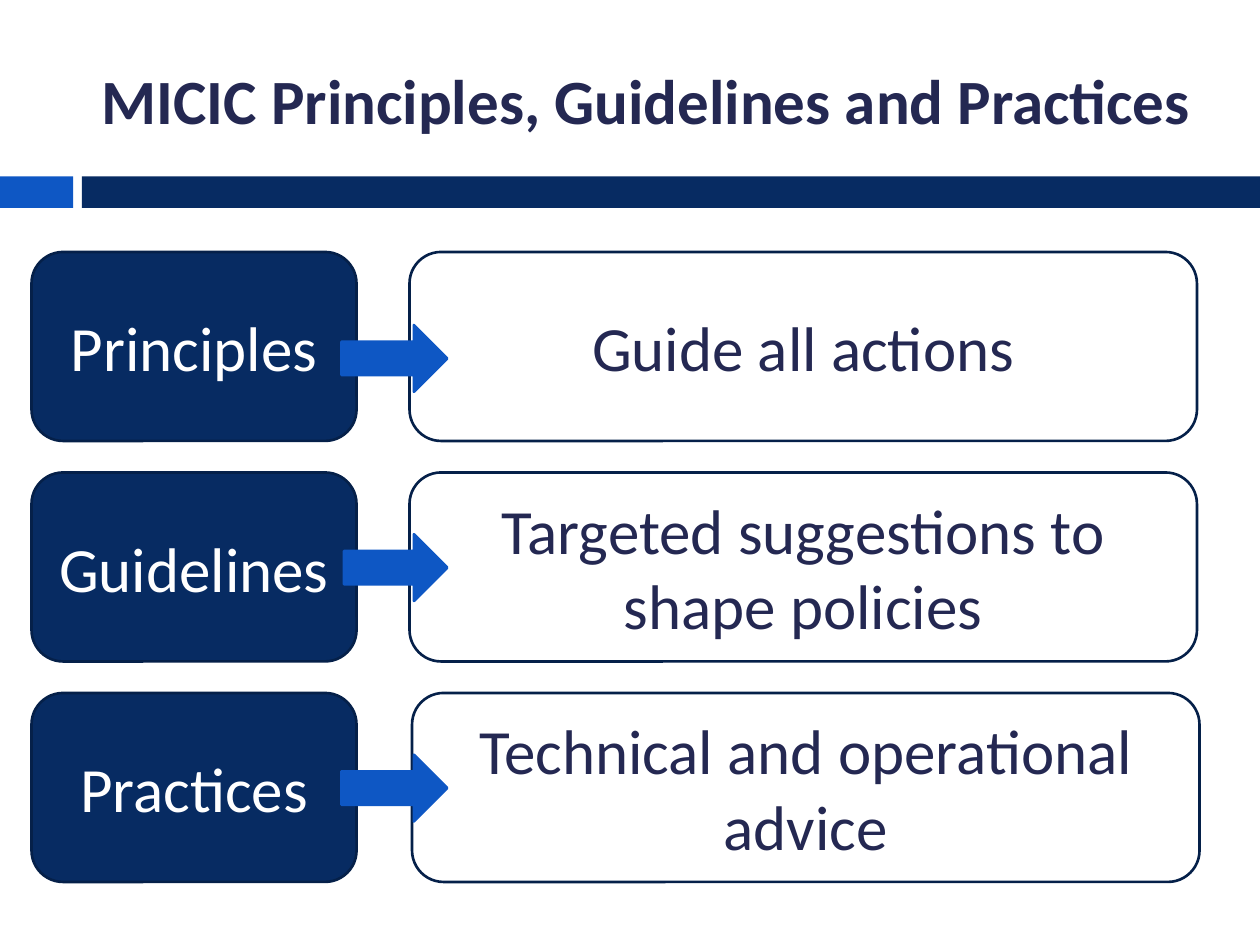
from dataclasses import dataclass
from pptx import Presentation
from pptx.dml.color import RGBColor as RGB
from pptx.enum.shapes import MSO_SHAPE as Shape
from pptx.enum.text import MSO_ANCHOR as Anchor, PP_ALIGN as Align
from pptx.util import Inches, Pt


@dataclass(frozen=True)
class Theme:
    navy: RGB = RGB.from_string("072B62")
    blue: RGB = RGB.from_string("0E57C4")
    outline: RGB = RGB.from_string("052049")
    ink: RGB = RGB.from_string("242852")
    white: RGB = RGB.from_string("FFFFFF")
    font: str = "Calibri"
    size: int = 36
    line: float = 1.5


THEME = Theme()
SLIDE_W, SLIDE_H = 10, 7.5
BAR_TOP, BAR_H = 1.4, 0.25
ROW_TOP, ROW_H, ROW_GAP = 2, 1.5, 0.25
LABEL_LEFT, LABEL_W = 0.25, 2.58
DETAIL_W = 6.25
ARROW_RIGHT, ARROW_H = 3.55, 0.53

# label, detail, detail left, arrow left, arrow offset within the row
ROWS = [
    ("Principles", "Guide all actions", 3.25, 2.71, 0.58),
    ("Guidelines", "Targeted suggestions to shape policies", 3.25, 2.73, 0.49),
    ("Practices", "Technical and operational advice", 3.27, 2.71, 0.49),
]


def write(sp, text, color, bold=False):
    tf = sp.text_frame
    tf.word_wrap = True
    tf.vertical_anchor = Anchor.MIDDLE
    p = tf.paragraphs[0]
    p.alignment = Align.CENTER
    r = p.add_run()
    r.text = text
    r.font.name = THEME.font
    r.font.size = Pt(THEME.size)
    r.font.bold = bold
    r.font.color.rgb = color


def add_block(s, kind, box, fill, line=None):
    sp = s.shapes.add_shape(kind, *map(Inches, box))
    sp.shadow.inherit = False
    sp.fill.solid()
    sp.fill.fore_color.rgb = fill
    if line is None:
        sp.line.fill.background()
    else:
        sp.line.color.rgb = line
        sp.line.width = Pt(THEME.line)
    return sp


def add_card(s, box, text, fill, color):
    sp = add_block(s, Shape.ROUNDED_RECTANGLE, box, fill, THEME.outline)
    write(sp, text, color)


def add_header(s, title):
    for left, right, fill in ((0, 0.58, THEME.blue), (0.65, SLIDE_W, THEME.navy)):
        add_block(s, Shape.RECTANGLE, (left, BAR_TOP, right - left, BAR_H), fill)
    sp = s.shapes.add_textbox(*map(Inches, (0.67, 0.25, 8.92, 1.08)))
    write(sp, title, THEME.ink, bold=True)


def add_row(s, index, label, detail, detail_left, arrow_left, arrow_offset):
    top = ROW_TOP + index * (ROW_H + ROW_GAP)
    add_card(s, (LABEL_LEFT, top, LABEL_W, ROW_H), label, THEME.navy, THEME.white)
    add_card(s, (detail_left, top, DETAIL_W, ROW_H), detail, THEME.white, THEME.ink)
    arrow = (arrow_left, top + arrow_offset, ARROW_RIGHT - arrow_left, ARROW_H)
    add_block(s, Shape.RIGHT_ARROW, arrow, THEME.blue, THEME.blue)


def main():
    prs = Presentation()
    prs.slide_width, prs.slide_height = Inches(SLIDE_W), Inches(SLIDE_H)
    s = prs.slides.add_slide(prs.slide_layouts[6])
    add_header(s, "MICIC Principles, Guidelines and Practices")
    for index, row in enumerate(ROWS):
        add_row(s, index, *row)
    prs.save("out.pptx")


if __name__ == "__main__":
    main()
